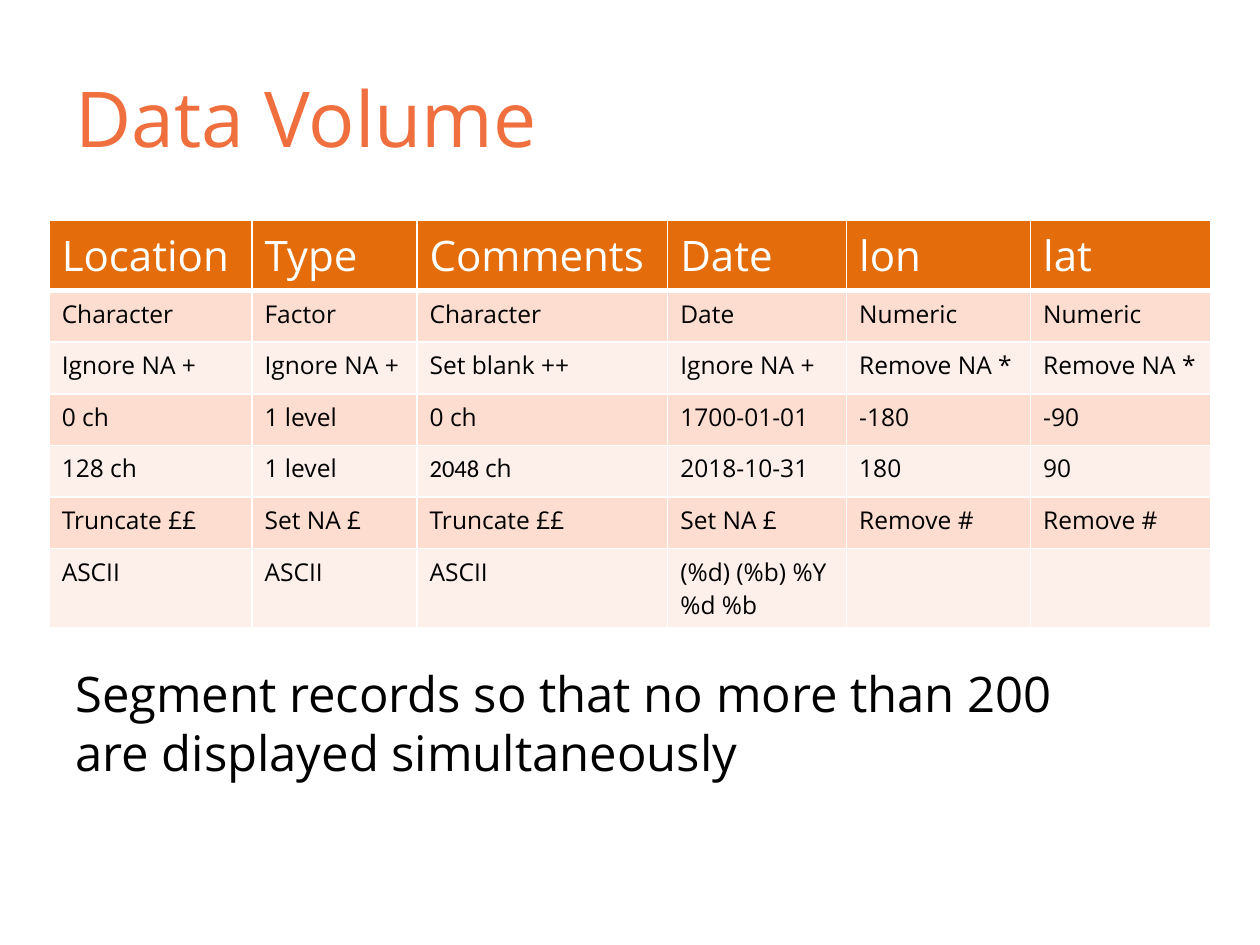
from lxml import etree
from pptx import Presentation
from pptx import util as u
from pptx.dml.color import RGBColor
from pptx.enum import text
from pptx.oxml.ns import qn

COLOURS = {
    "title": "EF6F3E",
    "header": "E46C0A",
    "odd_row": "FCDDCF",
    "even_row": "FDEFE9",
    "rule": "FFFFFF",
    "header_text": "FFFFFF",
    "body_text": "000000",
}
FONT = "Open Sans"
SLIDE_WIDTH, SLIDE_HEIGHT = 10, 7.5
MARGIN = 0.05 * SLIDE_WIDTH
COLUMN_WIDTHS = [1.61, 1.31, 1.99, 1.42, 1.46, 1.43]
ROW_HEIGHT = 0.41
FIELDS = [
    ["Location", "Type", "Comments", "Date", "lon", "lat"],
    ["Character", "Factor", "Character", "Date", "Numeric", "Numeric"],
    ["Ignore NA +", "Ignore NA +", "Set blank ++", "Ignore NA +", "Remove NA *", "Remove NA *"],
    ["0 ch", "1 level", "0 ch", "1700-01-01", "-180", "-90"],
    ["128 ch", "1 level", [("2048 ", "Calibri"), ("ch", FONT)], "2018-10-31", "180", "90"],
    ["Truncate ££", "Set NA £", "Truncate ££", "Set NA £", "Remove #", "Remove #"],
    ["ASCII", "ASCII", "ASCII", "(%d) (%b) %Y\n%d %b", "", ""],
]


def colour(name):
    return RGBColor.from_string(COLOURS[name])


def add_run(paragraph, words, size, ink, font=FONT):
    run = paragraph.add_run()
    run.text = words
    run.font.name = font
    run.font.size = u.Pt(size)
    run.font.bold = False
    run.font.color.rgb = colour(ink)


def fill_frame(frame, content, size, ink):
    lines = [content] if isinstance(content, list) else [[(line, FONT)] for line in content.split("\n")]
    for index, line in enumerate(lines):
        paragraph = frame.add_paragraph() if index else frame.paragraphs[0]
        paragraph.alignment = text.PP_ALIGN.LEFT
        for words, font in line:
            if words:
                add_run(paragraph, words, size, ink, font)


def rule_cell(cell, top, bottom):
    properties = cell._tc.get_or_add_tcPr()
    widths = {"a:lnL": 1, "a:lnR": 1, "a:lnT": top, "a:lnB": bottom}
    for position, (side, width) in enumerate(widths.items()):
        line = etree.Element(qn(side), w=str(u.Pt(width)))
        solid = etree.SubElement(line, qn("a:solidFill"))
        etree.SubElement(solid, qn("a:srgbClr"), val=COLOURS["rule"])
        properties.insert(position, line)


def add_heading(slide, words):
    heading = slide.shapes.title
    heading.left, heading.top = u.Inches(MARGIN), u.Inches(0.04 * SLIDE_HEIGHT)
    heading.width, heading.height = u.Inches(SLIDE_WIDTH - 2 * MARGIN), u.Inches(1.25)
    heading.text_frame.vertical_anchor = text.MSO_ANCHOR.MIDDLE
    fill_frame(heading.text_frame, words, 44, "title")


def add_field_table(slide, left, top):
    table = slide.shapes.add_table(
        len(FIELDS), len(COLUMN_WIDTHS), u.Inches(left), u.Inches(top),
        u.Inches(sum(COLUMN_WIDTHS)), u.Inches(ROW_HEIGHT * len(FIELDS)),
    ).table
    for column, width in zip(table.columns, COLUMN_WIDTHS):
        column.width = u.Inches(width)
    for r, values in enumerate(FIELDS):
        table.rows[r].height = u.Inches(ROW_HEIGHT)
        band = "header" if r == 0 else "odd_row" if r % 2 else "even_row"
        size, ink = (24, "header_text") if r == 0 else (14, "body_text")
        for c, value in enumerate(values):
            cell = table.cell(r, c)
            cell.fill.solid()
            cell.fill.fore_color.rgb = colour(band)
            rule_cell(cell, top=3 if r == 1 else 1, bottom=3 if r == 0 else 1)
            fill_frame(cell.text_frame, value, size, ink)


def add_note(slide, words, left, top, width, height):
    note = slide.shapes.add_textbox(*map(u.Inches, (left, top, width, height)))
    note.text_frame.word_wrap = True
    fill_frame(note.text_frame, words, 28, "body_text")


def main():
    deck = Presentation()
    deck.slide_width, deck.slide_height = u.Inches(SLIDE_WIDTH), u.Inches(SLIDE_HEIGHT)
    slide = deck.slides.add_slide(deck.slide_layouts[5])
    add_heading(slide, "Data Volume")
    add_field_table(slide, 0.39, 1.75)
    add_note(slide, "Segment records so that no more than 200 are displayed simultaneously",
             MARGIN, 5.22, 8.38, 1.33)
    deck.save("out.pptx")


if __name__ == "__main__":
    main()
